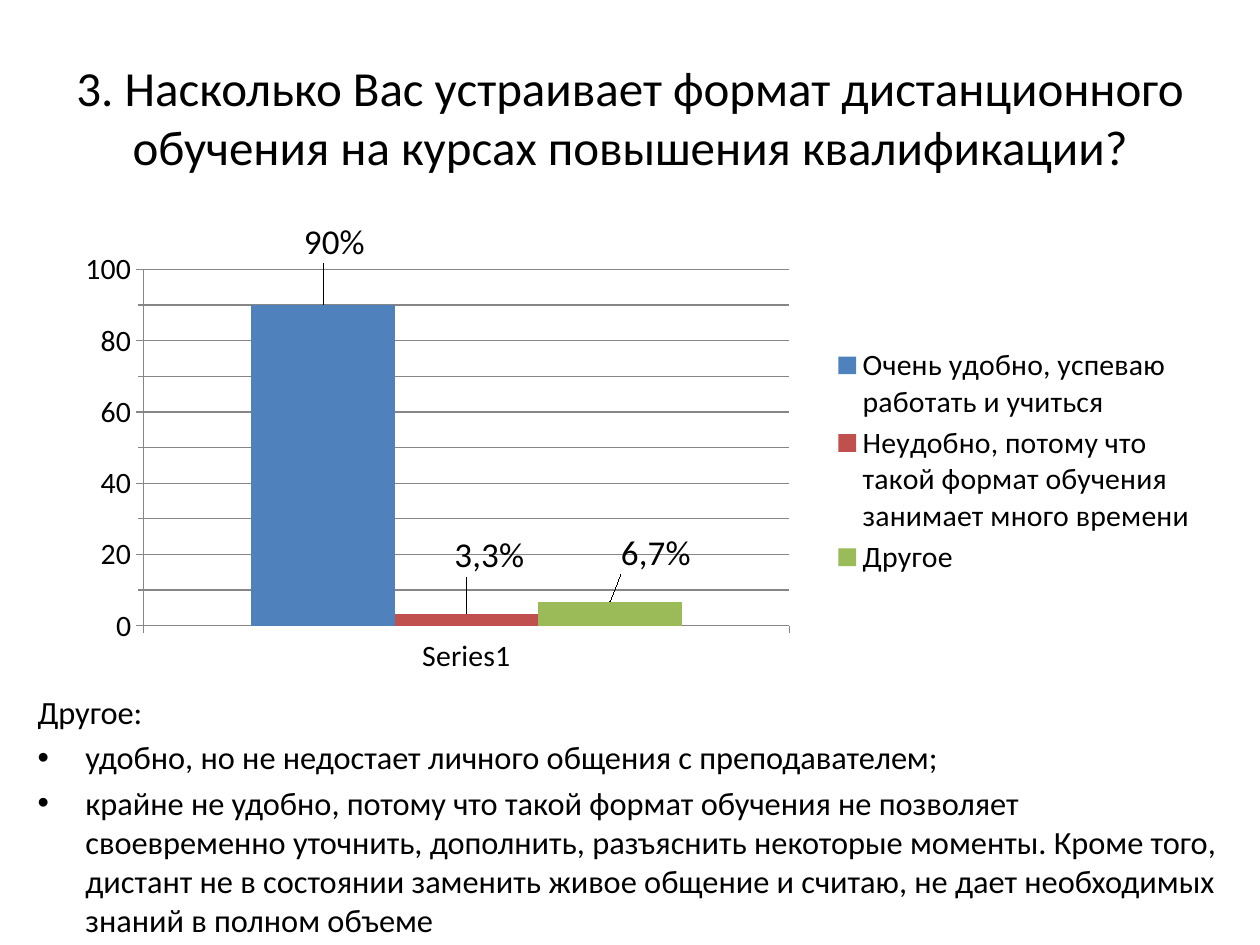
from copy import deepcopy

from lxml import etree
from pptx import Presentation
from pptx import util as u
from pptx.chart.data import CategoryChartData
from pptx.dml.color import RGBColor
from pptx.enum import chart as ch, text as t
from pptx.oxml import parse_xml
from pptx.oxml.ns import nsdecls, qn

BLACK = RGBColor(0, 0, 0)
GREY = RGBColor(0x86, 0x86, 0x86)
BLUE = RGBColor(0x4F, 0x81, 0xBD)
RED = RGBColor(0xC0, 0x50, 0x4D)
GREEN = RGBColor(0x9B, 0xBB, 0x59)
FACE = "Calibri"
WIDE, HIGH = u.Inches(10), u.Inches(7.5)

TITLE = ("3. Насколько Вас устраивает формат дистанционного "
         "обучения на курсах повышения квалификации?")
# name, value, label, label shift as shares of the chart, colour
ANSWERS = [
    ("Очень удобно, успеваю работать и учиться", 90, "90%", (0.01, -0.08), BLUE),
    ("Неудобно, потому что такой формат обучения занимает много времени",
     3.3, "3,3%", (0.02, -0.07), RED),
    ("Другое", 6.7, "6,7%", (0.04, -0.05), GREEN),
]
HEAD = "Другое:"
NOTES = [
    "удобно, но не недостает личного общения с преподавателем;",
    "крайне не удобно, потому что такой формат обучения не позволяет "
    "своевременно уточнить, дополнить, разъяснить некоторые моменты. Кроме того, "
    "дистант не в состоянии заменить живое общение и считаю, не дает необходимых "
    "знаний в полном объеме",
]


def share(x, y, w, h):
    """Turn shares of the slide into a box of lengths."""
    return [int(v) for v in (x * WIDE, y * HIGH, w * WIDE, h * HIGH)]


def style(font, size):
    for key, val in {"name": FACE, "size": u.Pt(size), "bold": False}.items():
        setattr(font, key, val)
    font.color.rgb = BLACK


def layout(target="", **vals):
    """Make a manual chart layout from shares of the chart."""
    edge = "".join(f'<c:{k}Mode val="edge"/>' for k in "xy") if target else ""
    inner = '<c:layoutTarget val="inner"/>' if target == "inner" else ""
    rest = "".join(f'<c:{k} val="{v}"/>' for k, v in vals.items())
    return parse_xml(f'<c:layout {nsdecls("c")}><c:manualLayout>{inner}{edge}{rest}'
                     '</c:manualLayout></c:layout>')


def place(parent, new, after=None):
    """Swap in a layout, after the named child or as the first one."""
    for old in parent.findall(qn("c:layout")):
        parent.remove(old)
    if after:
        parent.find(qn(after)).addnext(new)
    else:
        parent.insert(0, new)


def add_title(slide, box):
    head = slide.shapes.title
    for key, val in zip(("left", "top", "width", "height"), box):
        setattr(head, key, val)
    frame = head.text_frame
    frame.text = TITLE
    frame.vertical_anchor = t.MSO_ANCHOR.MIDDLE
    frame.paragraphs[0].alignment = t.PP_ALIGN.CENTER
    style(frame.paragraphs[0].runs[0].font, 28)


def add_bars(slide, box):
    data = CategoryChartData()
    data.categories = ["Series1"]
    for name, val, *_ in ANSWERS:
        data.add_series(name, [val])
    chart = slide.shapes.add_chart(ch.XL_CHART_TYPE.COLUMN_CLUSTERED, *box, data).chart
    style(chart.font, 17)
    chart.has_title = False
    chart.has_legend = True
    chart.legend.position = ch.XL_LEGEND_POSITION.RIGHT
    chart.legend.include_in_layout = False
    place(chart.legend._element, layout("edge", x=0.66, y=0.26, w=0.33, h=0.52),
          "c:legendPos")
    area = chart.plots[0]._element.getparent()
    place(area, layout("inner", x=0.07, y=0.1, w=0.56, h=0.78))

    axis = chart.value_axis
    rule = {"minimum_scale": 0, "maximum_scale": 100, "major_unit": 20, "minor_unit": 10,
            "has_major_gridlines": True, "has_minor_gridlines": True,
            "minor_tick_mark": ch.XL_TICK_MARK.OUTSIDE}
    for key, val in rule.items():
        setattr(axis, key, val)
    for part in (axis, chart.category_axis):
        part.major_tick_mark = ch.XL_TICK_MARK.OUTSIDE
    for part in (axis, chart.category_axis, axis.major_gridlines):
        part.format.line.color.rgb = GREY
        part.format.line.width = u.Pt(0.75)
    major, minor = (area.find(".//" + qn(f"c:{k}Gridlines")) for k in ("major", "minor"))
    minor.append(deepcopy(major.find(qn("c:spPr"))))

    plot = chart.plots[0]
    plot.gap_width, plot.overlap, plot.vary_by_categories = 150, 0, False
    for bar, (_, _, label, (dx, dy), color) in zip(plot.series, ANSWERS):
        bar.format.fill.solid()
        bar.format.fill.fore_color.rgb = color
        tag = bar.points[0].data_label
        tag.text_frame.text = label
        style(tag.text_frame.paragraphs[0].runs[0].font, 20)
        tag.position = ch.XL_LABEL_POSITION.OUTSIDE_END
        item = bar._element.find(".//" + qn("c:dLbl"))
        place(item, layout(x=dx, y=dy), "c:idx")


def add_notes(slide, box):
    frame = slide.shapes.add_textbox(*box).text_frame
    frame.word_wrap = True
    for row, words in enumerate([HEAD, *NOTES]):
        para = frame.paragraphs[0] if row == 0 else frame.add_paragraph()
        run = para.add_run()
        run.text = words
        style(run.font, 18.5)
        para.line_spacing = 1.0 if row else 0.9
        para.space_before = u.Pt(3.7)
        props = para._p.get_or_add_pPr()
        props.set("marL", str(u.Inches(0.38)))
        props.set("indent", str(-u.Inches(0.38)))
        if row:
            etree.SubElement(props, qn("a:buFont"), typeface="Arial")
            etree.SubElement(props, qn("a:buChar"), char="•")
        else:
            etree.SubElement(props, qn("a:buNone"))


def main():
    deck = Presentation()
    deck.slide_width, deck.slide_height = WIDE, HIGH
    slide = deck.slides.add_slide(deck.slide_layouts[5])
    add_title(slide, share(0.05, 0.04, 0.9, 1 / 6))
    add_bars(slide, share(0.05, 0.7 / 3, 0.915, 0.487))
    add_notes(slide, share(0.02, 0.73, 0.96, 0.27))
    deck.save("out.pptx")


if __name__ == "__main__":
    main()
